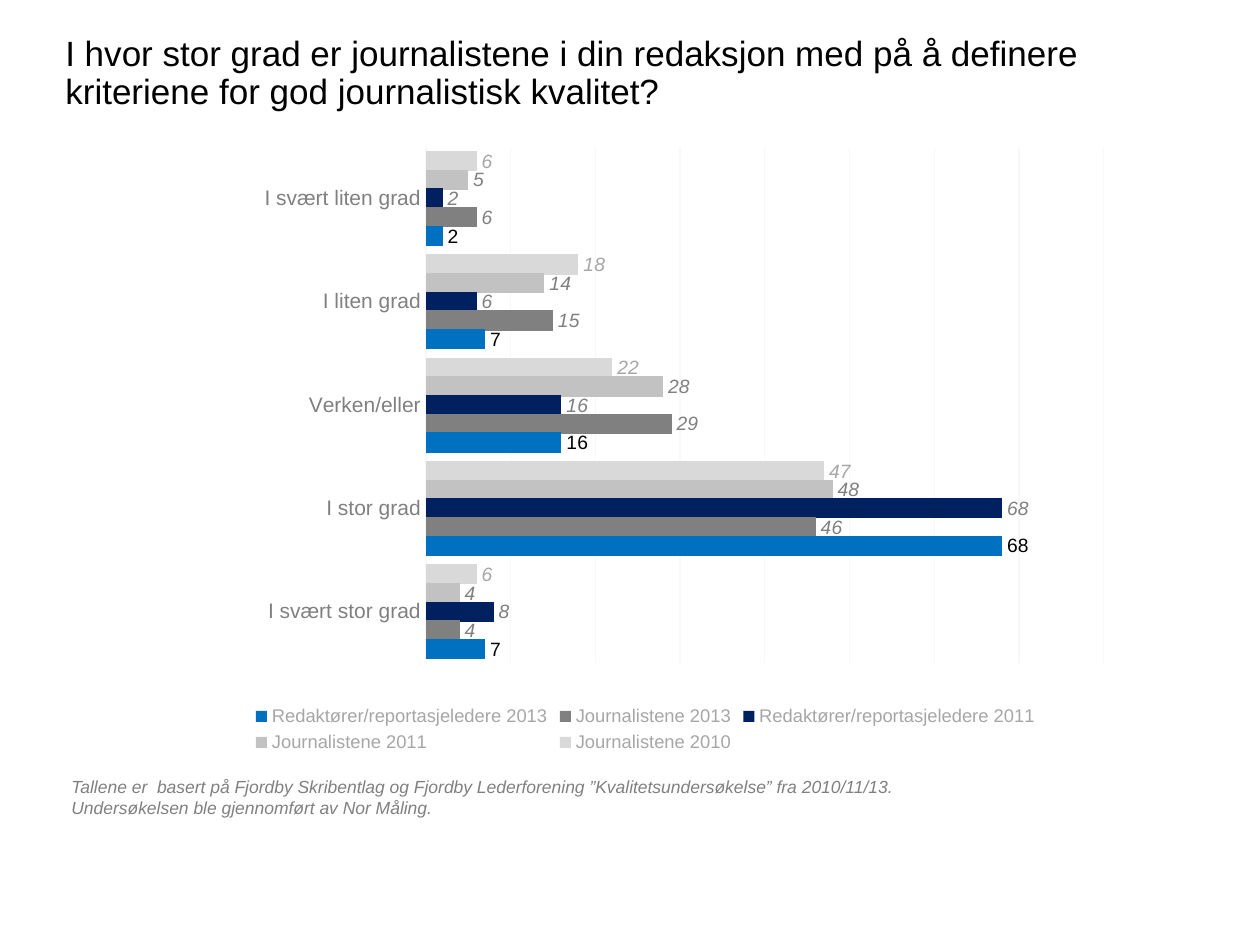
from lxml.etree import SubElement
from pptx import Presentation
from pptx.chart.data import CategoryChartData
from pptx.dml.color import RGBColor
from pptx.enum.chart import XL_CHART_TYPE, XL_LABEL_POSITION, XL_LEGEND_POSITION, XL_TICK_MARK
from pptx.enum.text import MSO_ANCHOR
from pptx.oxml.ns import qn
from pptx.util import Pt

BLACK = RGBColor(0x00, 0x00, 0x00)
GRAY = RGBColor(0x80, 0x80, 0x80)
MID_GRAY = RGBColor(0xA6, 0xA6, 0xA6)
SILVER = RGBColor(0xC2, 0xC2, 0xC2)
LIGHT_GRAY = RGBColor(0xD9, 0xD9, 0xD9)
GRID = RGBColor(0xF8, 0xF8, 0xF8)
NAVY = RGBColor(0x00, 0x20, 0x60)
BLUE = RGBColor(0x00, 0x70, 0xC0)

TITLE = ("I hvor stor grad er journalistene i din redaksjon med på å definere "
         "kriteriene for god journalistisk kvalitet?")
SOURCE = ("Tallene er  basert på Fjordby Skribentlag og Fjordby Lederforening "
          "”Kvalitetsundersøkelse” fra 2010/11/13. "
          "Undersøkelsen ble gjennomført av Nor Måling.")
CATEGORIES = ["I svært liten grad", "I liten grad", "Verken/eller", "I stor grad", "I svært stor grad"]
SERIES = [
    ("Journalistene 2010", (6, 18, 22, 47, 6), LIGHT_GRAY, MID_GRAY),
    ("Journalistene 2011", (5, 14, 28, 48, 4), SILVER, GRAY),
    ("Redaktører/reportasjeledere 2011", (2, 6, 16, 68, 8), NAVY, GRAY),
    ("Journalistene 2013", (6, 15, 29, 46, 4), GRAY, GRAY),
    ("Redaktører/reportasjeledere 2013", (2, 7, 16, 68, 7), BLUE, BLACK),
]


def px(*values):
    return [round(v * 914400 / 126) for v in values]


def set_font(font, size, color, italic=False):
    font.name = "Arial"
    font.size = Pt(size)
    font.color.rgb = color
    font.bold = False
    font.italic = italic


prs = Presentation()
prs.slide_width, prs.slide_height = px(1260, 945)
s = prs.slides.add_slide(prs.slide_layouts[6])

for box, text, size, color, italic, spacing in (
    ((53, 30, 1183, 147), TITLE, 20, BLACK, False, 0.9),
    ((59, 770, 936, 55), SOURCE, 10, GRAY, True, 1.0),
):
    tf = s.shapes.add_textbox(*px(*box)).text_frame
    tf.word_wrap = True
    tf.vertical_anchor = MSO_ANCHOR.TOP
    tf.text = text
    p = tf.paragraphs[0]
    p.line_spacing = spacing
    set_font(p.runs[0].font, size, color, italic)

data = CategoryChartData()
data.categories = CATEGORIES
for name, values, fill, label in SERIES:
    data.add_series(name, values)
chart = s.shapes.add_chart(XL_CHART_TYPE.BAR_CLUSTERED, *px(168, 128, 955, 630), data).chart
chart.has_title = False
chart.font.name = "Arial"

chart.has_legend = True
chart.legend.position = XL_LEGEND_POSITION.BOTTOM
chart.legend.include_in_layout = False
set_font(chart.legend.font, 10.5, MID_GRAY)

cat_axis = chart.category_axis
cat_axis.reverse_order = True
cat_axis.major_tick_mark = XL_TICK_MARK.NONE
cat_axis.format.line.fill.background()
set_font(cat_axis.tick_labels.font, 12, GRAY)

val_axis = chart.value_axis
val_axis.visible = False
val_axis.minimum_scale = 0
val_axis.maximum_scale = 80
val_axis.major_unit = 10
val_axis.has_major_gridlines = True
val_axis.major_gridlines.format.line.color.rgb = GRID

plot = chart.plots[0]
plot.gap_width = 41
plot.overlap = 8
plot.vary_by_categories = False
for ser, (name, values, fill, label) in zip(plot.series, SERIES):
    ser.invert_if_negative = False
    ser.format.fill.solid()
    ser.format.fill.fore_color.rgb = fill
    labels = ser.data_labels
    labels.show_value = True
    labels.number_format = "#,##0"
    labels.number_format_is_linked = False
    labels.position = XL_LABEL_POSITION.OUTSIDE_END
    set_font(labels.font, 11, label, label != BLACK)

plot_area = chart.element.find(".//" + qn("c:plotArea"))
layout = plot_area.find(qn("c:layout"))
if layout is None:
    layout = SubElement(plot_area, qn("c:layout"))
    plot_area.insert(0, layout)
manual = SubElement(layout, qn("c:manualLayout"))
for tag, value in (("layoutTarget", "inner"), ("xMode", "edge"), ("yMode", "edge"),
                   ("x", 0.27), ("y", 0.03), ("w", 0.71), ("h", 0.82)):
    SubElement(manual, qn("c:" + tag)).set("val", str(value))

prs.save("out.pptx")
